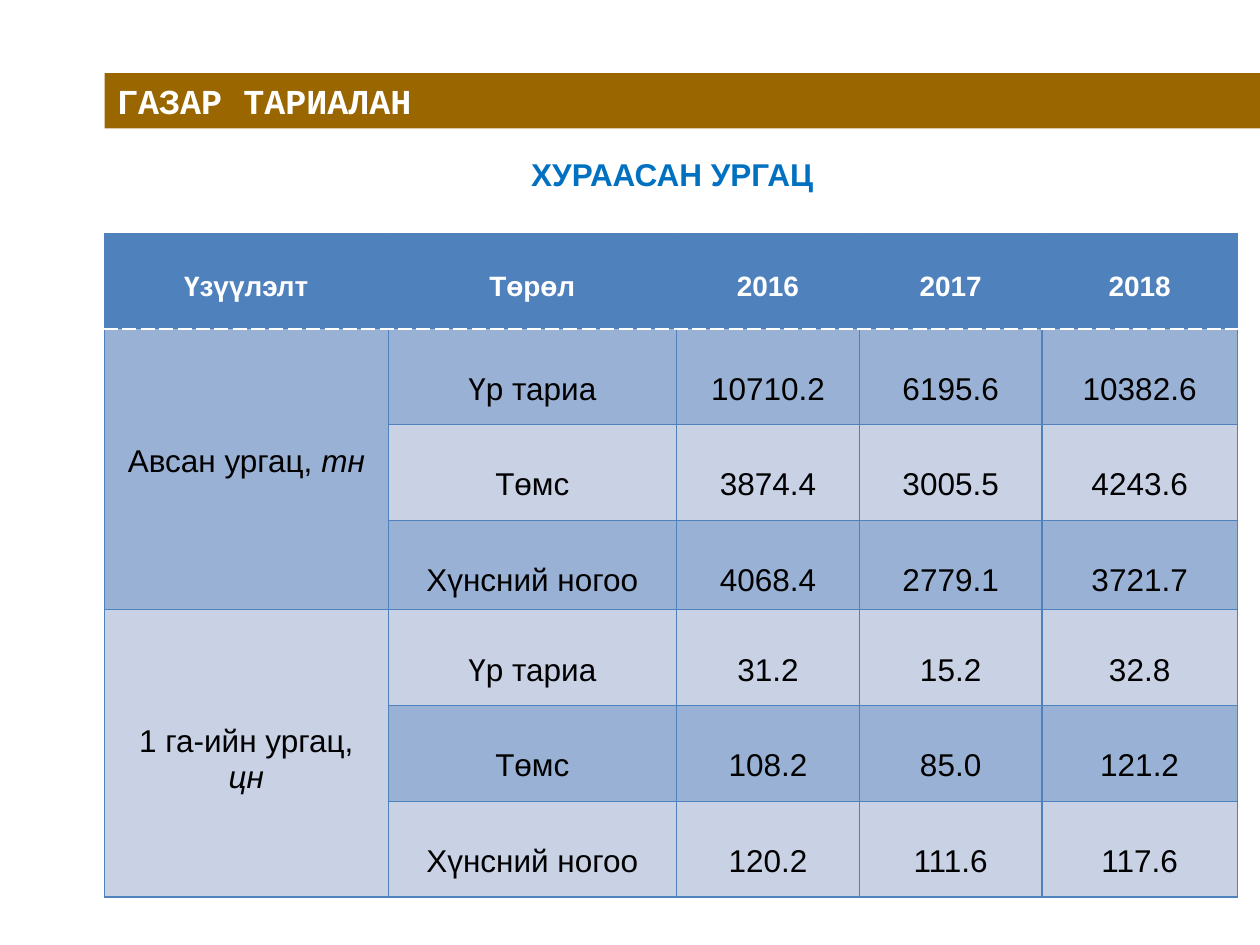
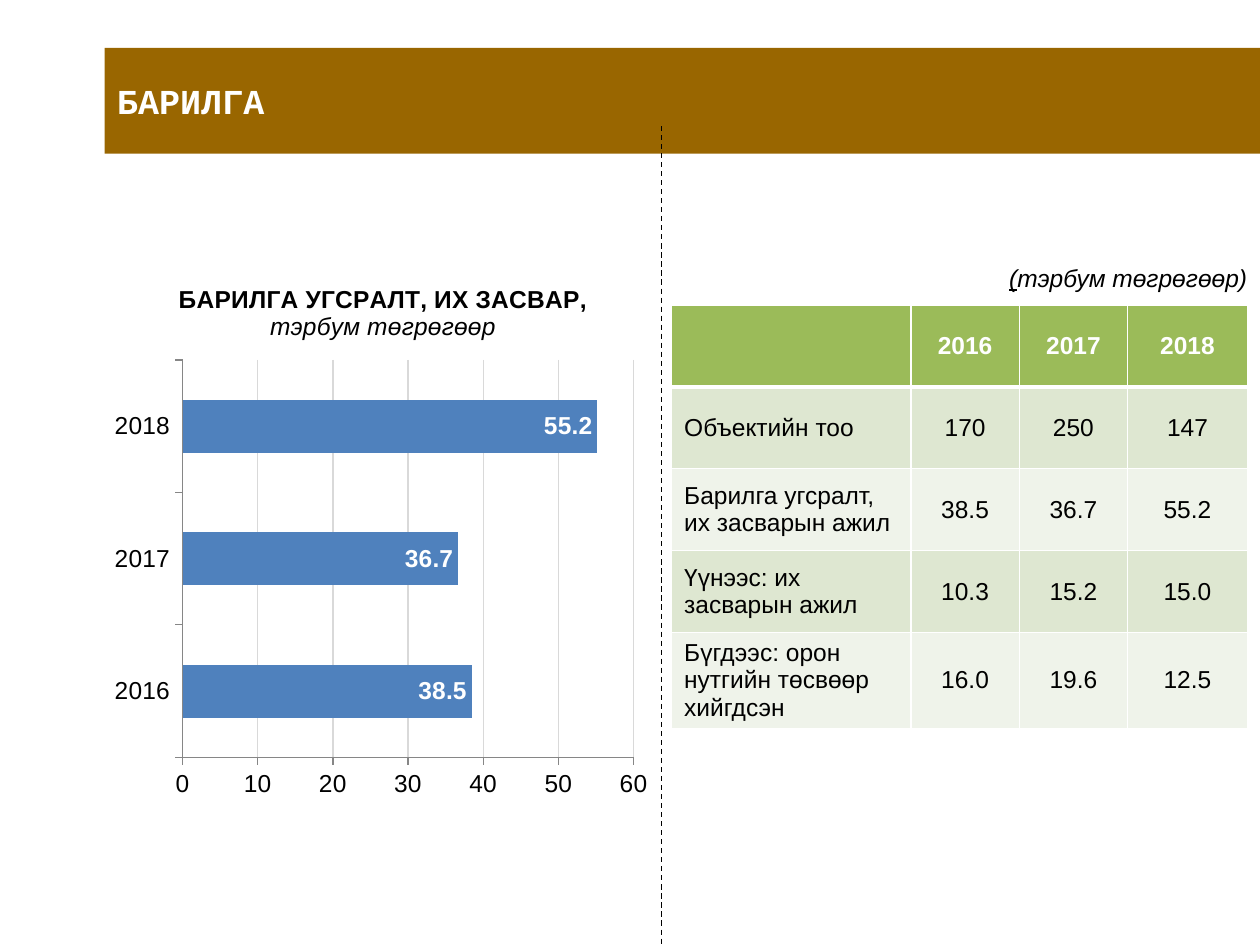
from dataclasses import dataclass

import pptx
import pptx.chart.data
import pptx.dml.color
import pptx.enum.chart
import pptx.enum.dml
import pptx.enum.shapes
import pptx.enum.text
import pptx.oxml
import pptx.oxml.ns
import pptx.util
from pptx.dml.color import RGBColor
from pptx.util import Inches, Pt

ALIGN = pptx.enum.text.PP_ALIGN
ANCHOR = pptx.enum.text.MSO_ANCHOR

BROWN = RGBColor(0x99, 0x66, 0x00)
WHITE = RGBColor(0xFF, 0xFF, 0xFF)
BLACK = RGBColor(0x00, 0x00, 0x00)
CAPTION_BLUE = RGBColor(0x00, 0x70, 0xC0)
BLUE = RGBColor(0x4F, 0x81, 0xBD)
BLUE_BAND = RGBColor(0x98, 0xB1, 0xD4)
BLUE_PALE = RGBColor(0xC9, 0xD1, 0xE5)
GREEN = RGBColor(0x9B, 0xBB, 0x59)
GREEN_BAND = RGBColor(0xDE, 0xE7, 0xD1)
GREEN_PALE = RGBColor(0xEF, 0xF3, 0xEA)
GRID_GREY = RGBColor(0xD9, 0xD9, 0xD9)
AXIS_GREY = RGBColor(0x86, 0x86, 0x86)

BODY_FONT = "Arial"
TITLE_FONT = "Courier New"
BAND_LEFT = 0.83
BAND_MIDDLE = 0.8
YEARS = ["2016", "2017", "2018"]


@dataclass(frozen=True)
class Box:
    left: float
    top: float
    width: float
    height: float

    def inches(self) -> tuple:
        return tuple(Inches(v) for v in (self.left, self.top, self.width, self.height))


@dataclass(frozen=True)
class Span:
    """A piece of text with its emphasis."""
    text: str
    bold: bool = False
    italic: bool = False
    underline: bool = False


@dataclass(frozen=True)
class Border:
    color: RGBColor
    width: float
    dash: str = "solid"


@dataclass(frozen=True)
class TableStyle:
    header_fill: RGBColor
    band_fills: tuple[RGBColor, RGBColor]
    border: Border
    header_rule: Border
    header_size: int
    body_size: int


HARVEST_STYLE = TableStyle(BLUE, (BLUE_BAND, BLUE_PALE), Border(BLUE, 0.75),
                           Border(WHITE, 0.9, "sysDash"), 16, 18)
BUILDING_STYLE = TableStyle(GREEN, (GREEN_BAND, GREEN_PALE), Border(WHITE, 1),
                            Border(WHITE, 3), 14, 14)


def write(paragraph, spans: list[Span], size: int, color: RGBColor,
          align: ALIGN, font: str = BODY_FONT) -> None:
    paragraph.alignment = align
    paragraph.space_before = Pt(0)
    for span in spans:
        run = paragraph.add_run()
        run.text = span.text
        run.font.name = font
        run.font.size = Pt(size)
        run.font.color.rgb = color
        run.font.bold = span.bold
        run.font.italic = span.italic
        run.font.underline = span.underline


def place(placeholder, box: Box, anchor: ANCHOR):
    """Moves a placeholder and returns its first paragraph."""
    placeholder.left, placeholder.top, placeholder.width, placeholder.height = box.inches()
    frame = placeholder.text_frame
    frame.word_wrap = True
    frame.auto_size = pptx.enum.text.MSO_AUTO_SIZE.NONE
    frame.vertical_anchor = anchor
    return frame.paragraphs[0]


def add_topic_slide(prs, title: str, band_height: float, caption: list[Span],
                    caption_box: Box, size: int, color: RGBColor, align: ALIGN):
    slide = prs.slides.add_slide(prs.slide_layouts[1])
    band = slide.shapes.title
    band.fill.solid()
    band.fill.fore_color.rgb = BROWN
    band_box = Box(BAND_LEFT, BAND_MIDDLE - band_height / 2, 10 - BAND_LEFT, band_height)
    write(place(band, band_box, ANCHOR.MIDDLE), [Span(title, bold=True)],
          20, WHITE, ALIGN.JUSTIFY, TITLE_FONT)

    paragraph = place(slide.placeholders[1], caption_box, ANCHOR.BOTTOM)
    properties = paragraph._p.get_or_add_pPr()
    properties.set("marL", "0")
    properties.set("indent", "0")
    properties.append(pptx.oxml.parse_xml(
        f'<a:buNone {pptx.oxml.ns.nsdecls("a")}/>'))
    write(paragraph, caption, size, color, align)
    return slide


def set_borders(cell, top: Border, bottom: Border, side: Border) -> None:
    properties = cell._tc.get_or_add_tcPr()
    for edge, border in (("L", side), ("R", side), ("T", top), ("B", bottom)):
        properties.append(pptx.oxml.parse_xml(
            f'<a:ln{edge} {pptx.oxml.ns.nsdecls("a")} w="{Pt(border.width)}">'
            f'<a:solidFill><a:srgbClr val="{border.color}"/></a:solidFill>'
            f'<a:prstDash val="{border.dash}"/></a:ln{edge}>'))


def add_styled_table(slide, box: Box, widths: list[float], heights: list[float],
                     rows: list[list[list[Span]]], style: TableStyle):
    """Draws a header row and banded body rows; all text is centred."""
    table = slide.shapes.add_table(len(rows), len(widths), *box.inches()).table
    for column, width in zip(table.columns, widths):
        column.width = Inches(width)
    for row, height in zip(table.rows, heights):
        row.height = Inches(height)
    for r, row in enumerate(rows):
        header = r == 0
        for c, spans in enumerate(row):
            cell = table.cell(r, c)
            set_borders(cell,
                        style.header_rule if r == 1 else style.border,
                        style.header_rule if header else style.border,
                        style.border)
            cell.fill.solid()
            cell.fill.fore_color.rgb = (
                style.header_fill if header else style.band_fills[(r - 1) % 2])
            cell.vertical_anchor = ANCHOR.MIDDLE
            write(cell.text_frame.paragraphs[0], spans,
                  style.header_size if header else style.body_size,
                  WHITE if header else BLACK, ALIGN.CENTER)
    return table


def header_row(*labels: str) -> list[list[Span]]:
    return [[Span(label, bold=True)] if label else [] for label in labels]


def body_row(*texts: str) -> list[list[Span]]:
    return [[Span(text)] if text else [] for text in texts]


def build_harvest_slide(prs) -> None:
    slide = add_topic_slide(prs, "ГАЗАР ТАРИАЛАН", 0.44,
                            [Span("ХУРААСАН УРГАЦ", bold=True)],
                            Box(0.92, 1.08, 8.83, 0.5), 18, CAPTION_BLUE, ALIGN.CENTER)
    rows = [
        header_row("Үзүүлэлт", "Төрөл", *YEARS),
        body_row("", "Үр тариа", "10710.2", "6195.6", "10382.6"),
        body_row("", "Төмс", "3874.4", "3005.5", "4243.6"),
        body_row("", "Хүнсний ногоо", "4068.4", "2779.1", "3721.7"),
        body_row("", "Үр тариа", "31.2", "15.2", "32.8"),
        body_row("", "Төмс", "108.2", "85.0", "121.2"),
        body_row("", "Хүнсний ногоо", "120.2", "111.6", "117.6"),
    ]
    indicators = {1: ("Авсан ургац, ", "тн"), 4: ("1 га-ийн ургац, ", "цн")}
    for row, (label, unit) in indicators.items():
        rows[row][0] = [Span(label), Span(unit, italic=True)]
    heights = [0.76, 0.76, 0.76, 0.71, 0.76, 0.76, 0.76]
    table = add_styled_table(slide, Box(0.83, 1.85, 9, 5.28),
                             [2.25, 2.29, 1.45, 1.45, 1.55], heights, rows, HARVEST_STYLE)
    for r in range(len(rows)):
        for c in range(len(rows[r])):
            cell = table.cell(r, c)
            cell.vertical_anchor = ANCHOR.TOP
            cell.margin_top = Inches(0.3 if r == 0 else 0.34)
    for row in indicators:
        indicator = table.cell(row, 0)
        indicator.merge(table.cell(row + 2, 0))
        indicator.margin_top = Inches(0.91)
        indicator.margin_left = indicator.margin_right = Inches(0.12)


def set_plot_area(chart, area: Box) -> None:
    """Fixes the inner plot area, in fractions of the chart."""
    plot_area = chart._chartSpace.chart.plotArea
    for layout in plot_area.findall(pptx.oxml.ns.qn("c:layout")):
        plot_area.remove(layout)
    sizes = "".join(f'<c:{tag} val="{value}"/>' for tag, value in
                    zip("xywh", (area.left, area.top, area.width, area.height)))
    plot_area.insert(0, pptx.oxml.parse_xml(
        f'<c:layout {pptx.oxml.ns.nsdecls("c")}><c:manualLayout>'
        '<c:layoutTarget val="inner"/><c:xMode val="edge"/><c:yMode val="edge"/>'
        f'{sizes}</c:manualLayout></c:layout>'))


def add_building_chart(slide) -> None:
    data = pptx.chart.data.CategoryChartData(number_format="0.0")
    data.categories = YEARS
    data.add_series("Series 1", [38.5, 36.7, 55.2])
    chart = slide.shapes.add_chart(pptx.enum.chart.XL_CHART_TYPE.BAR_CLUSTERED,
                                   *Box(0.83, 2.08, 4.42, 4.32).inches(), data).chart
    chart.has_legend = False
    chart.font.name = BODY_FONT
    chart.font.size = Pt(14)
    chart.font.color.rgb = BLACK
    chart.has_title = True
    write(chart.chart_title.text_frame.paragraphs[0],
          [Span("БАРИЛГА УГСРАЛТ, ИХ ЗАСВАР, ", bold=True),
           Span("тэрбум төгрөгөөр", italic=True)], 14, BLACK, ALIGN.CENTER)
    chart.chart_title.include_in_layout = False

    for axis in (chart.category_axis, chart.value_axis):
        axis.major_tick_mark = pptx.enum.chart.XL_TICK_MARK.OUTSIDE
        axis.format.line.color.rgb = AXIS_GREY
    values = chart.value_axis
    values.minimum_scale, values.maximum_scale, values.major_unit = 0, 60, 10
    values.tick_labels.number_format = "0"
    values.tick_labels.number_format_is_linked = False
    values.major_gridlines.format.line.color.rgb = GRID_GREY
    values.major_gridlines.format.line.width = Pt(0.75)

    plot = chart.plots[0]
    plot.gap_width = 150
    plot.vary_by_categories = False
    bars = plot.series[0].format.fill
    bars.solid()
    bars.fore_color.rgb = BLUE
    labels = plot.series[0].data_labels
    labels.show_value = True
    labels.position = pptx.enum.chart.XL_LABEL_POSITION.INSIDE_END
    labels.font.size = Pt(14)
    labels.font.bold = True
    labels.font.color.rgb = WHITE
    set_plot_area(chart, Box(0.14, 0.18, 0.81, 0.73))


def build_construction_slide(prs) -> None:
    slide = add_topic_slide(prs, "БАРИЛГА", 0.84,
                            [Span("(", italic=True, underline=True),
                             Span("тэрбум төгрөгөөр)", italic=True)],
                            Box(5.33, 1.67, 4.67, 0.7), 14, BLACK, ALIGN.RIGHT)
    add_building_chart(slide)
    rows = [
        header_row("", *YEARS),
        body_row("Объектийн тоо", "170", "250", "147"),
        body_row("Барилга угсралт, их засварын ажил", "38.5", "36.7", "55.2"),
        body_row("Үүнээс: их засварын ажил", "10.3", "15.2", "15.0"),
        body_row("Бүгдээс: орон нутгийн төсвөөр хийгдсэн", "16.0", "19.6", "12.5"),
    ]
    table = add_styled_table(slide, Box(5.33, 2.42, 4.58, 3.36), [1.9, 0.86, 0.86, 0.95],
                             [0.65] * 4 + [0.76], rows, BUILDING_STYLE)
    for r in range(1, len(rows)):
        table.cell(r, 0).text_frame.paragraphs[0].alignment = ALIGN.LEFT

    divider = slide.shapes.add_connector(pptx.enum.shapes.MSO_CONNECTOR.STRAIGHT,
                                         Inches(5.25), Inches(1), Inches(5.25), Inches(7.5))
    divider.line.color.rgb = BLACK
    divider.line.width = Pt(0.75)
    divider.line.dash_style = pptx.enum.dml.MSO_LINE.DASH
    divider._element.spPr.append(pptx.oxml.parse_xml(
        f'<a:effectLst {pptx.oxml.ns.nsdecls("a")}/>'))


def main() -> None:
    prs = pptx.Presentation()
    prs.slide_width, prs.slide_height = Inches(10), Inches(7.5)
    build_harvest_slide(prs)
    build_construction_slide(prs)
    prs.save("out.pptx")


if __name__ == "__main__":
    main()
